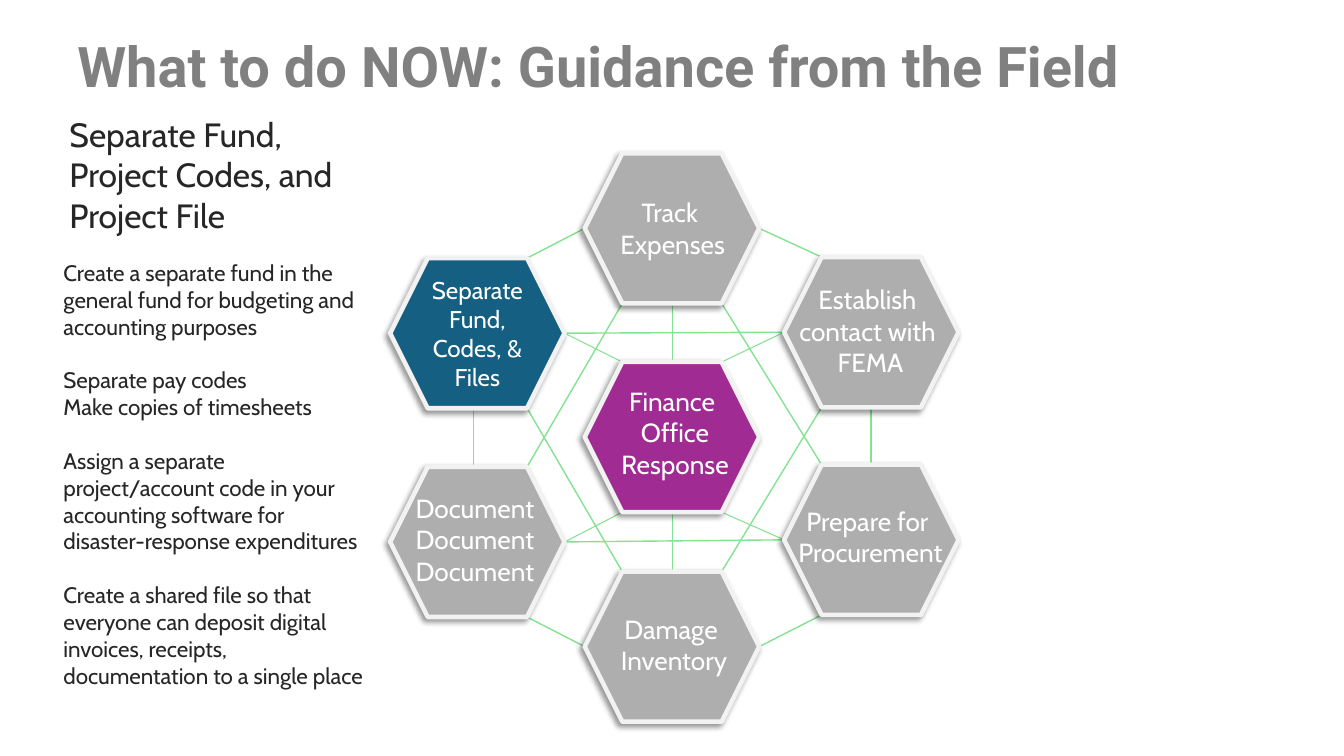
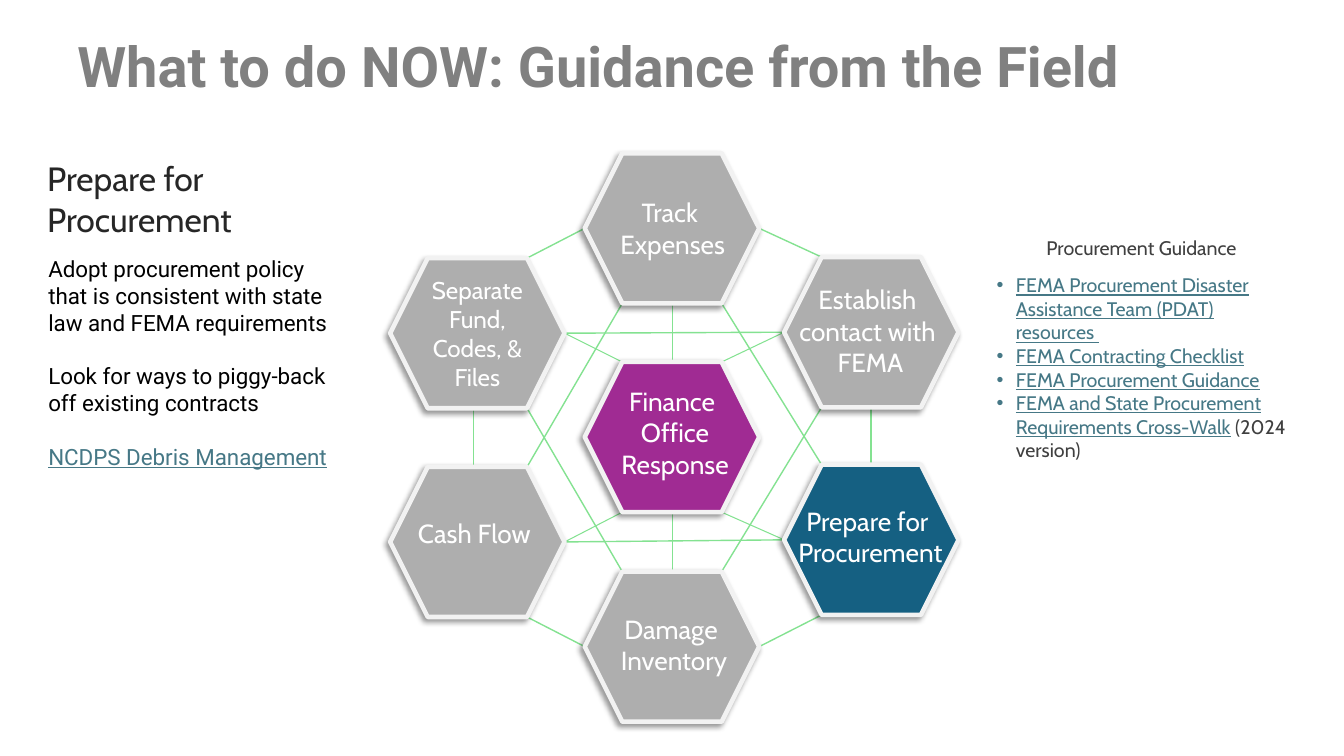
from lxml.etree import SubElement as Sub
from pptx import Presentation
from pptx.dml.color import RGBColor
from pptx.enum.shapes import MSO_CONNECTOR as Line, MSO_SHAPE as Shape
from pptx.enum.text import MSO_ANCHOR as Anchor, MSO_AUTO_SIZE as Auto, PP_ALIGN as Align
from pptx.oxml.ns import qn
from pptx.util import Pt

# Colours
GREY, DARK, SOFT, BLACK, WHITE = "808080", "262626", "404040", "000000", "FFFFFF"
GREEN, EDGE, IDLE, ACTIVE, CORE, LINK = "84E291", "F2F2F2", "AEAEAE", "156082", "A02B93", "467886"

# Text styles
TITLE = dict(name="Roboto", size=Pt(40), bold=True, color=GREY)
HEAD = dict(name="Cabin", size=Pt(24), color=DARK)
BODY = dict(name="Cabin", size=Pt(16), color=DARK)
PLAIN = dict(BODY, name="Roboto", color=BLACK)
LABEL = dict(name="Cabin", size=Pt(18.7), color=WHITE)
INNER = dict(LABEL, size=Pt(17.3))
SIDE = dict(name="Cabin", size=Pt(14), color=SOFT)
URL = dict(color=LINK, underline=True)

# Hexagons: size, corner inset and centres
WIDE, HIGH, INSET = 124.6, 107.3, 26.8
CENTRES = {
    "fund": (341, 238), "track": (480, 163.1), "fema": (622.4, 237.3),
    "cash": (341, 387.1), "proc": (622.4, 385.6), "damage": (480, 461.9),
    "core": (480, 312.2),
}
# Corners as offsets from the centre
DX, DY = WIDE / 2 - INSET, HIGH / 2
CORNERS = {
    "W": (-WIDE / 2, 0), "E": (WIDE / 2, 0), "NW": (-DX, -DY),
    "NE": (DX, -DY), "SW": (-DX, DY), "SE": (DX, DY),
}
RING = [
    ("fund", "SE", "damage", "NW"), ("fund", "E", "fema", "W"),
    ("cash", "NE", "track", "SW"), ("track", "SE", "proc", "NW"),
    ("cash", "E", "proc", "W"), ("damage", "NE", "fema", "SW"),
    ("cash", "SE", "damage", "W"), ("damage", "E", "proc", "SW"),
    ("fema", "NW", "track", "E"), ("track", "W", "fund", "NE"),
]
SPOKES = [
    ("fund", "E", "core", "NW"), ("cash", "E", "core", "SW"),
    ("core", "SE", "proc", "W"), ("core", "NE", "fema", "W"),
]
# Upright lines: x, top, bottom, weight
POSTS = [(338.4, 285.8, 335.5, 1), (480.2, 218.2, 429.8, 0.75), (622.1, 285.8, 335.5, 1)]
# Labels: lines, width, shift from the centre
LABELS = {
    "fema": (["Establish ", "contact with ", "FEMA"], 118.8, -0.7, -1),
    "proc": (["Prepare for ", "Procurement"], 120.2, -0.7, -2.2),
    "damage": (["Damage ", "Inventory"], 90, 1.4, -1.4),
    "track": (["Track ", "Expenses"], 92.9, 0.5, 0),
    "core": (["Finance ", "Office", "Response"], 95.8, 2.2, -3.2),
}
PAPERS = (["Document"] * 3, 100.8, -1.8, -1.8)
FLOW = (["Cash Flow"], 99.4, -2.2, -6.2)


def tint(code):
    return RGBColor.from_string(code)


def style(font, form):
    for key, value in form.items():
        if key == "color":
            font.color.rgb = tint(value)
        else:
            setattr(font, key, value)


def write(para, runs, form, **opts):
    """Fill a paragraph; runs is a string or a list of (text, extra format)."""
    for text, extra in [(runs, {})] if isinstance(runs, str) else runs:
        run = para.add_run()
        run.text = text
        style(run.font, {**form, **extra})
    for key, value in opts.items():
        setattr(para, key, value)


def fill(frame, items, form, gaps=None, **opts):
    """Write one paragraph per item, with space before those in gaps."""
    for i, item in enumerate(items):
        para = frame.paragraphs[0] if i == 0 else frame.add_paragraph()
        write(para, item, form, space_before=Pt((gaps or {}).get(i, 0)), **opts)


def add_box(slide, box, wrap=True):
    frame = slide.shapes.add_textbox(*map(Pt, box)).text_frame
    frame.word_wrap = wrap
    frame.auto_size = Auto.SHAPE_TO_FIT_TEXT
    return frame


def add_title(slide, text):
    title = slide.shapes.title
    title.left, title.top, title.width, title.height = map(Pt, (48, 21.6, 864, 56.2))
    frame = title.text_frame
    frame.auto_size = Auto.NONE
    frame.vertical_anchor = Anchor.MIDDLE
    write(frame.paragraphs[0], text, TITLE, alignment=Align.LEFT, line_spacing=0.9)


def add_line(slide, start, end, weight):
    line = slide.shapes.add_connector(Line.STRAIGHT, *map(Pt, (*start, *end)))
    line.line.color.rgb = tint(GREEN)
    line.line.width = Pt(weight)
    Sub(line._element.spPr, qn("a:effectLst"))


def add_shade(shape):
    shape.shadow.inherit = False
    effects = shape._element.spPr.find(qn("a:effectLst"))
    shade = Sub(effects, qn("a:outerShdw"), blurRad=str(Pt(4)), dist=str(Pt(3)),
                dir=str(135 * 60000), algn="tr", rotWithShape="0")
    Sub(Sub(shade, qn("a:srgbClr"), val=BLACK), qn("a:alpha"), val="40000")


def add_hex(slide, name, code):
    x, y = CENTRES[name]
    box = x - WIDE / 2, y - HIGH / 2, WIDE, HIGH
    shape = slide.shapes.add_shape(Shape.HEXAGON, *map(Pt, box))
    shape.fill.solid()
    shape.fill.fore_color.rgb = tint(code)
    shape.line.color.rgb = tint(EDGE)
    shape.line.width = Pt(3.25)
    add_shade(shape)
    return shape.text_frame


def add_label(slide, name, lines, wide, dx, dy):
    x, y = CENTRES[name]
    high = 22.5 * len(lines) + 7.2
    box = x + dx - wide / 2, y + dy - high / 2, wide, high
    fill(add_box(slide, box, False), lines, LABEL, alignment=Align.CENTER)


def corner(name, side):
    return [a + b for a, b in zip(CENTRES[name], CORNERS[side])]


def add_hive(slide, active, cash):
    # Lines lie behind the hexagons
    for x, top, bottom, weight in POSTS:
        add_line(slide, (x, top), (x, bottom), weight)
    for links, weight in ((RING, 1), (SPOKES, 0.75)):
        for a, start, b, end in links:
            add_line(slide, corner(a, start), corner(b, end), weight)
    # Hexagons
    codes = {"core": CORE, active: ACTIVE}
    frames = {name: add_hex(slide, name, codes.get(name, IDLE)) for name in CENTRES}
    fund = frames["fund"]
    fund.word_wrap = True
    fund.vertical_anchor = Anchor.MIDDLE
    fill(fund, ["Separate Fund, Codes, & Files"], INNER, alignment=Align.CENTER)
    # Labels
    for name, label in {**LABELS, "cash": cash}.items():
        add_label(slide, name, *label)


def add_bullet(para):
    props = para._p.get_or_add_pPr()
    props.set("marL", str(Pt(13.7)))
    props.set("indent", str(-Pt(13.7)))
    Sub(props, qn("a:buFont"), typeface="Arial")
    Sub(props, qn("a:buChar"), char="•")


def add_guide(slide):
    frame = add_box(slide, (704.9, 148.3, 221, 234.7))
    frame.auto_size = Auto.NONE
    frame.vertical_anchor = Anchor.MIDDLE
    frame.margin_bottom = Pt(36.7)
    fill(frame, [
        "Procurement Guidance",
        [("FEMA Procurement Disaster Assistance Team (PDAT) resources ", URL)],
        [("FEMA Contracting Checklist", URL)],
        [("FEMA Procurement Guidance", URL)],
        [("FEMA and State Procurement Requirements Cross-Walk", URL), (" (2024 version)", {})],
    ], SIDE, {1: 10})
    head, *rest = frame.paragraphs
    head.alignment = Align.CENTER
    for para in rest:
        add_bullet(para)


def add_page(deck, active, cash):
    slide = deck.slides.add_slide(deck.slide_layouts[5])
    add_title(slide, "What to do NOW: Guidance from the Field")
    add_hive(slide, active, cash)
    return slide


def main():
    deck = Presentation()
    deck.slide_width, deck.slide_height = Pt(960), Pt(540)

    # Slide 1: funds and files
    slide = add_page(deck, "fund", PAPERS)
    fill(add_box(slide, (42.5, 77.8, 229.7, 94)),
         ["Separate Fund, Project Codes, and Project File"], HEAD)
    fill(add_box(slide, (38.2, 181.4, 229.7, 320)), [
        "Create a separate fund in the general fund for budgeting and accounting purposes",
        "Separate pay codes",
        "Make copies of timesheets",
        "Assign a separate project/account code in your accounting software for "
        "disaster-response expenditures",
        "Create a shared file so that everyone can deposit digital invoices, receipts, "
        "documentation to a single place",
    ], BODY, {1: 19.2, 3: 19.2, 4: 19.2})

    # Slide 2: procurement
    slide = add_page(deck, "proc", FLOW)
    fill(add_box(slide, (26.6, 109.4, 228.2, 65.5)), ["Prepare for Procurement"], HEAD)
    fill(add_box(slide, (27.4, 178.6, 228.2, 160)), [
        "Adopt procurement policy that is consistent with state law and FEMA requirements",
        "Look for ways to piggy-back off existing contracts",
        [("NCDPS Debris Management", URL)],
    ], PLAIN, {1: 19.2, 2: 19.2})
    add_guide(slide)

    deck.save("out.pptx")


if __name__ == "__main__":
    main()
